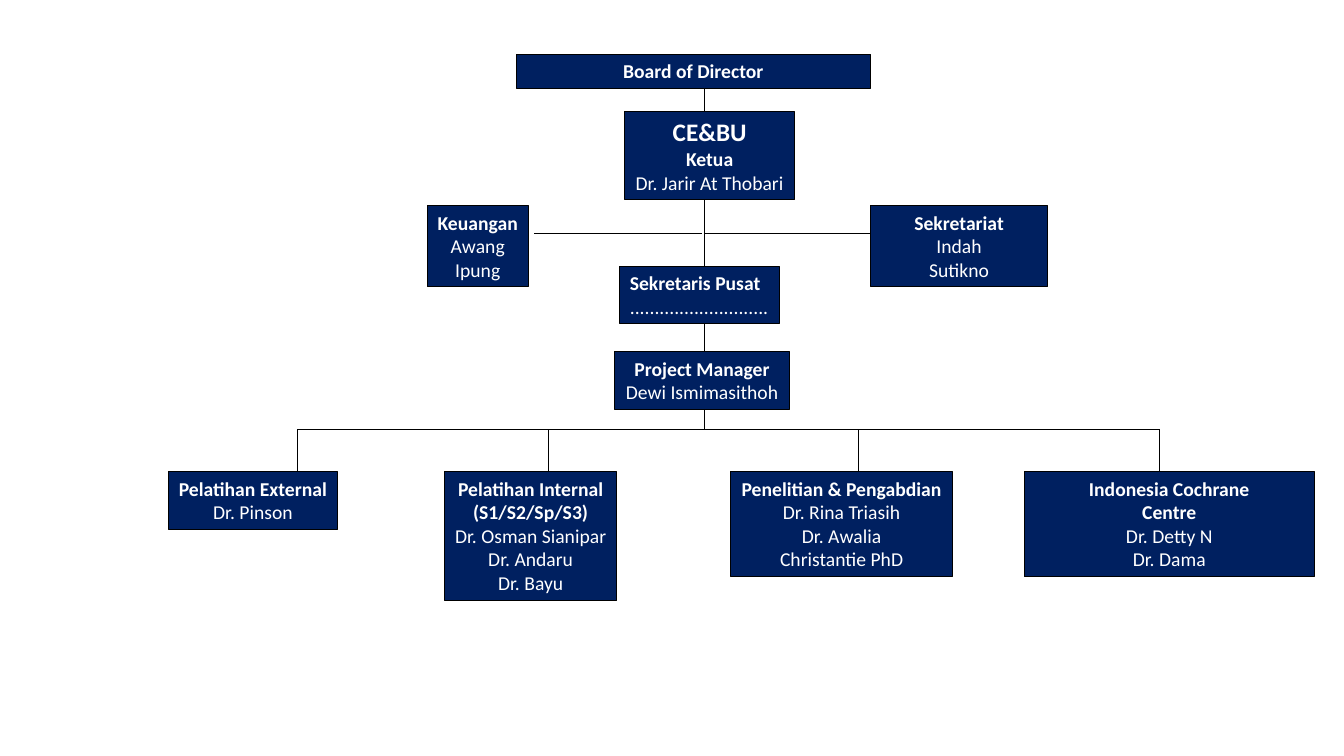
from lxml.etree import SubElement
from pptx import Presentation
from pptx.dml.color import RGBColor
from pptx.enum.shapes import MSO_CONNECTOR, MSO_SHAPE
from pptx.enum.text import MSO_ANCHOR, MSO_AUTO_SIZE, PP_ALIGN
from pptx.oxml.ns import qn
from pptx.util import Pt

NAVY = RGBColor(0x00, 0x20, 0x60)
BLACK = RGBColor(0x00, 0x00, 0x00)
WHITE = RGBColor(0xFF, 0xFF, 0xFF)
FONT = "Calibri"
TEXT_SIZE = 14
UNIT_SIZE = 18
LINE_HEIGHT = 1.21
PADDING = 7.2

TRUNK = 503.3
BRANCH = 306.7


def add_line(page, left, top, right, bottom):
    line = page.shapes.add_connector(
        MSO_CONNECTOR.STRAIGHT, Pt(left), Pt(top), Pt(right), Pt(bottom))
    line.line.color.rgb = BLACK
    line.line.width = Pt(0.75)
    SubElement(line._element.spPr, qn("a:effectLst"))


def add_box(page, left, top, width, headings, names=(), wrap=False,
            align=PP_ALIGN.CENTER, first_size=TEXT_SIZE):
    lines = [(text, True) for text in headings] + [(text, False) for text in names]
    sizes = [first_size] + [TEXT_SIZE] * (len(lines) - 1)
    height = sum(sizes) * LINE_HEIGHT + PADDING
    box = page.shapes.add_shape(
        MSO_SHAPE.RECTANGLE, Pt(left), Pt(top), Pt(width), Pt(height))
    box.shadow.inherit = False
    box.fill.solid()
    box.fill.fore_color.rgb = NAVY
    box.line.color.rgb = BLACK
    box.line.width = Pt(0.75)
    frame = box.text_frame
    frame.word_wrap = wrap
    frame.auto_size = MSO_AUTO_SIZE.SHAPE_TO_FIT_TEXT
    frame.vertical_anchor = MSO_ANCHOR.TOP
    for index, ((text, bold), size) in enumerate(zip(lines, sizes)):
        para = frame.add_paragraph() if index else frame.paragraphs[0]
        para.alignment = align
        span = para.add_run()
        span.text = text
        span.font.name = FONT
        span.font.size = Pt(size)
        span.font.bold = bold
        span.font.color.rgb = WHITE


def add_leadership(page, left, top, width):
    add_line(page, TRUNK, top + 24.2, TRUNK, BRANCH)
    add_box(page, left, top, width, ["Board of Director"], wrap=True)
    add_box(page, left + 77.8, top + 41, 121, ["CE&BU", "Ketua"],
            ["Dr. Jarir At Thobari"], first_size=UNIT_SIZE)
    add_box(page, left + 74.2, top + 151.2, 113.8, ["Sekretaris Pusat"],
            ["............................"], align=PP_ALIGN.LEFT)
    add_box(page, left + 70.6, top + 212.4, 124.6, ["Project Manager"],
            ["Dewi Ismimasithoh"])


def add_support(page, left, top, width):
    office_width = 126
    office_left = left + width - office_width
    level = top + 20.1
    add_line(page, left + 76.3, level, TRUNK - 2.2, level)
    add_line(page, TRUNK, level, office_left, level)
    add_box(page, left, top, 72, ["Keuangan"], ["Awang", "Ipung"])
    add_box(page, office_left, top, office_width, ["Sekretariat"],
            ["Indah", "Sutikno"], wrap=True)


def add_divisions(page, left, top):
    divisions = [
        (0, 121, 92.2, ["Pelatihan External"], ["Dr. Pinson"], False),
        (197.3, 123.1, 271.5, ["Pelatihan Internal", "(S1/S2/Sp/S3)"],
         ["Dr. Osman Sianipar", "Dr. Andaru", "Dr. Bayu"], False),
        (401.8, 158.4, 493.2, ["Penelitian & Pengabdian"],
         ["Dr. Rina Triasih", "Dr. Awalia", "Christantie PhD"], False),
        (611.3, 207.4, 707.8, ["Indonesia Cochrane", "Centre"],
         ["Dr. Detty N", "Dr. Dama"], True),
    ]
    add_line(page, left + divisions[0][2], BRANCH, left + divisions[-1][2], BRANCH)
    for offset, width, stem, headings, names, wrap in divisions:
        add_line(page, left + stem, BRANCH, left + stem, top)
        add_box(page, left + offset, top, width, headings, names, wrap)


def main():
    deck = Presentation()
    deck.slide_width = Pt(960)
    deck.slide_height = Pt(540)
    page = deck.slides.add_slide(deck.slide_layouts[6])
    add_leadership(page, 368.6, 38.9, 253.4)
    add_support(page, 305.3, 146.9, 442.8)
    add_divisions(page, 120.2, 337)
    deck.save("out.pptx")


if __name__ == "__main__":
    main()
